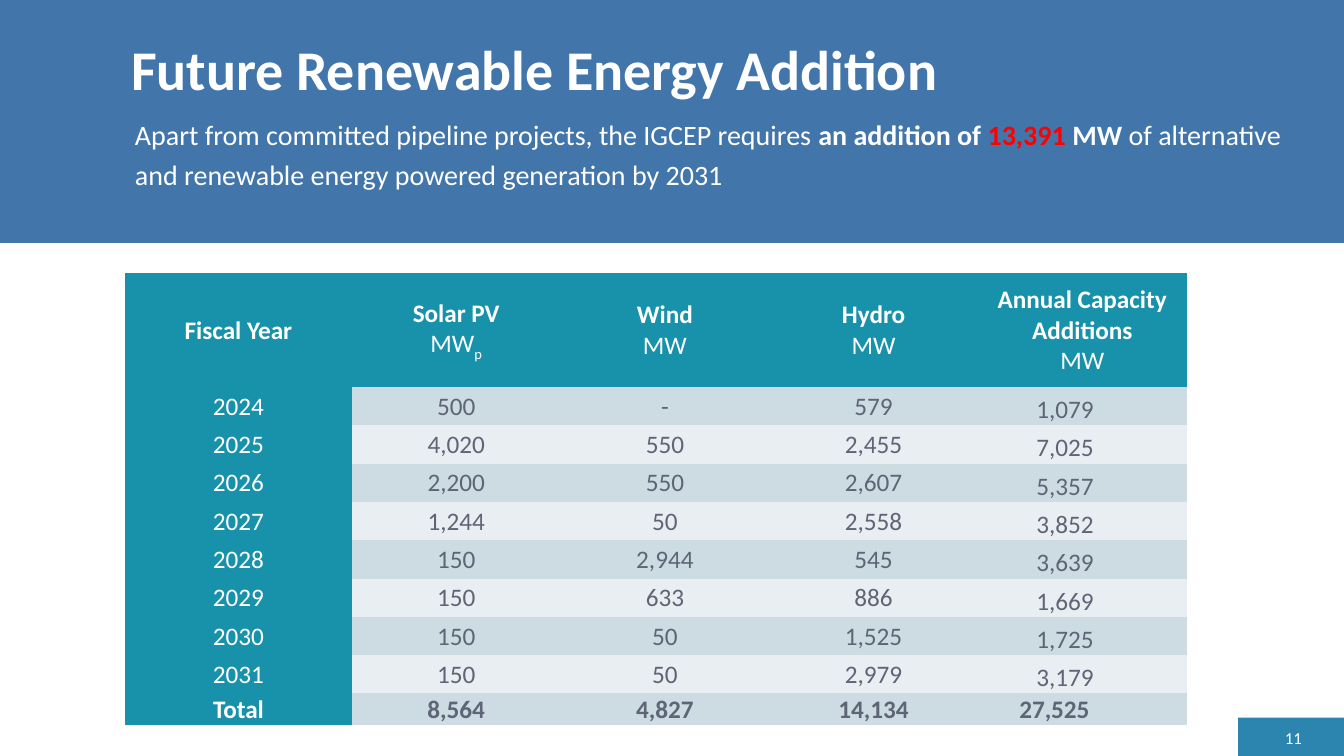
from pptx import Presentation
from pptx.dml.color import RGBColor
from pptx.enum import shapes, text
from pptx.oxml.ns import qn
from pptx.util import Inches, Pt

# Content
TITLE = "Future Renewable Energy Addition"
SUMMARY = [  # text, bold, highlighted
    ("Apart from committed pipeline projects, the IGCEP requires ", False, False),
    ("an addition of ", True, False),
    ("13,391", True, True),
    (" MW ", True, False),
    ("of alternative and renewable energy powered generation by 2031", False, False),
]
PAGE_NUMBER = "11"
HEADERS = [  # name lines, unit, subscript
    (["Fiscal Year"], "", ""),
    (["Solar PV"], "MW", "p"),
    (["Wind"], "MW", ""),
    (["Hydro"], "MW", ""),
    (["Annual Capacity", "Additions"], "MW", ""),
]
CAPACITY = [
    ("2024", "500", "-", "579", "1,079"),
    ("2025", "4,020", "550", "2,455", "7,025"),
    ("2026", "2,200", "550", "2,607", "5,357"),
    ("2027", "1,244", "50", "2,558", "3,852"),
    ("2028", "150", "2,944", "545", "3,639"),
    ("2029", "150", "633", "886", "1,669"),
    ("2030", "150", "50", "1,525", "1,725"),
    ("2031", "150", "50", "2,979", "3,179"),
    ("Total", "8,564", "4,827", "14,134", "27,525"),
]

# Layout in inches
WIDTH, HEIGHT = 13.33, 7.5
COLUMNS = [2.25] + [2.07] * 4
ROWS = [1.13] + [0.38] * 8 + [0.31]
YEAR_SUM_INDENT, TOTAL_SUM_INDENT = 0.58, 0.41

# Style
FONT = "Calibri"
NO_GRID_STYLE = "{2D5ABB26-0587-4C30-8999-92F81FD0307C}"
WHITE = RGBColor(0xFF, 0xFF, 0xFF)
RED = RGBColor(0xFF, 0x00, 0x00)
BAND_BLUE = RGBColor(0x42, 0x76, 0xAA)
CORNER_BLUE = RGBColor(0x2C, 0x85, 0xAE)
TEAL = RGBColor(0x18, 0x91, 0xAB)
GREY = RGBColor(0x5E, 0x65, 0x76)
STRIPES = [RGBColor(0xCC, 0xDC, 0xE2), RGBColor(0xE8, 0xEE, 0xF1)]


def set_font(paragraph, size, color, bold=False):
    font = paragraph.font
    font.name, font.size, font.bold = FONT, Pt(size), bold
    font.color.rgb = color


def add_rectangle(slide, left, top, width, height, color):
    shape = slide.shapes.add_shape(
        shapes.MSO_SHAPE.RECTANGLE, *map(Inches, (left, top, width, height)))
    shape.shadow.inherit = False
    shape.fill.solid()
    shape.fill.fore_color.rgb = color
    shape.line.fill.background()
    return shape


def add_text_box(slide, left, top, width, height):
    frame = slide.shapes.add_textbox(
        *map(Inches, (left, top, width, height))).text_frame
    frame.word_wrap = True
    return frame


def format_cell(cell, fill, color, bold):
    cell.fill.solid()
    cell.fill.fore_color.rgb = fill
    cell.margin_left = cell.margin_right = cell.margin_top = Inches(0.01)
    cell.margin_bottom = 0
    cell.vertical_anchor = text.MSO_ANCHOR.MIDDLE
    paragraph = cell.text_frame.paragraphs[0]
    paragraph.alignment = text.PP_ALIGN.CENTER
    set_font(paragraph, 18, color, bold)
    return paragraph


def add_capacity_table(slide):
    frame = slide.shapes.add_table(
        len(ROWS), len(COLUMNS), Inches(1.24), Inches(2.71),
        Inches(sum(COLUMNS)), Inches(sum(ROWS)))
    table = frame.table
    table.first_row = table.horz_banding = False
    next(frame.element.iter(qn("a:tableStyleId"))).text = NO_GRID_STYLE
    for column, width in zip(table.columns, COLUMNS):
        column.width = Inches(width)
    for row, height in zip(table.rows, ROWS):
        row.height = Inches(height)

    # Header row: bold name above a regular unit
    for index, (lines, unit, subscript) in enumerate(HEADERS):
        paragraph = format_cell(table.cell(0, index), TEAL, WHITE, True)
        for number, line in enumerate(lines):
            if number:
                paragraph.add_line_break()
            paragraph.add_run().text = line
        if unit:
            paragraph.add_line_break()
            run = paragraph.add_run()
            run.text, run.font.bold = unit, False
        if subscript:
            run = paragraph.add_run()
            run.text, run.font.bold = subscript, False
            run.font._element.set("baseline", "-25000")

    # Striped body, teal first column, indented sums in the last column
    for row, values in enumerate(CAPACITY, 1):
        is_total = row == len(CAPACITY)
        for index, value in enumerate(values):
            cell = table.cell(row, index)
            cell.text = value
            fill, color = (STRIPES[(row - 1) % 2], GREY) if index else (TEAL, WHITE)
            paragraph = format_cell(cell, fill, color, is_total)
            if index == len(COLUMNS) - 1:
                paragraph.alignment = text.PP_ALIGN.LEFT
                cell.vertical_anchor = text.MSO_ANCHOR.BOTTOM
                cell.margin_left = Inches(
                    TOTAL_SUM_INDENT if is_total else YEAR_SUM_INDENT)


def main():
    presentation = Presentation()
    presentation.slide_width = Inches(WIDTH)
    presentation.slide_height = Inches(HEIGHT)
    slide = presentation.slides.add_slide(presentation.slide_layouts[5])

    # Header band, placed behind the title
    band = add_rectangle(slide, 0, 0, WIDTH, 2.41, BAND_BLUE)
    band.element.getparent().insert(2, band.element)

    # Title
    title = slide.shapes.title
    title.left, title.top, title.width, title.height = map(
        Inches, (1.2, 0.29, 10.93, 0.77))
    title.text = TITLE
    title.text_frame.vertical_anchor = text.MSO_ANCHOR.TOP
    title.text_frame.auto_size = text.MSO_AUTO_SIZE.NONE
    paragraph = title.text_frame.paragraphs[0]
    paragraph.alignment = text.PP_ALIGN.LEFT
    set_font(paragraph, 40, WHITE, True)

    # Summary
    paragraph = add_text_box(slide, 1.24, 1.05, 11.57, 0.87).paragraphs[0]
    paragraph.line_spacing = 1.2
    set_font(paragraph, 20, WHITE)
    for words, bold, highlighted in SUMMARY:
        run = paragraph.add_run()
        run.text, run.font.bold = words, bold
        if highlighted:
            run.font.color.rgb = RED

    add_capacity_table(slide)

    # Page number in the corner
    add_rectangle(slide, WIDTH - 1.05, HEIGHT - 0.38, 1.05, 0.38, CORNER_BLUE)
    frame = add_text_box(slide, 12.6, 7.2, 0.41, 0.23)
    frame.vertical_anchor = text.MSO_ANCHOR.MIDDLE
    frame.text = PAGE_NUMBER
    frame.paragraphs[0].alignment = text.PP_ALIGN.RIGHT
    set_font(frame.paragraphs[0], 12, WHITE)

    presentation.save("out.pptx")


if __name__ == "__main__":
    main()
